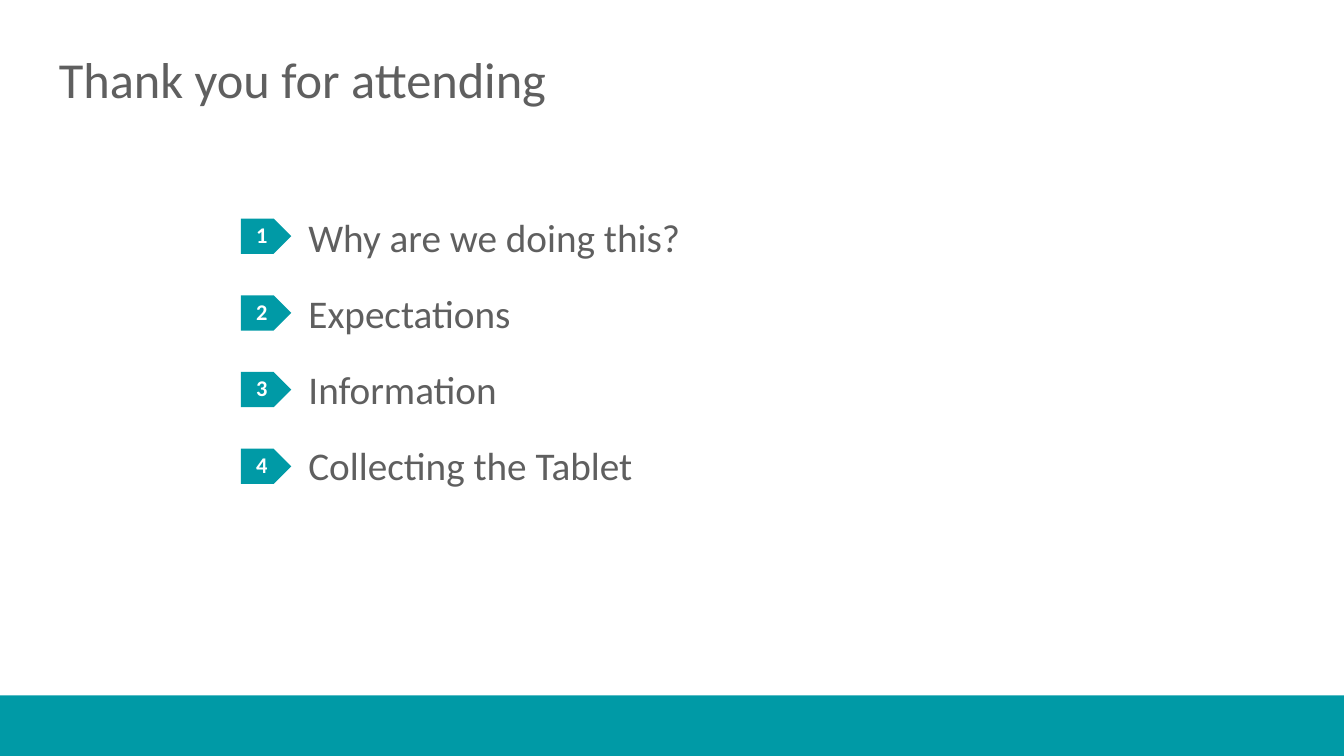
from lxml import etree
from pptx import Presentation
from pptx.dml.color import RGBColor
from pptx.enum.shapes import MSO_SHAPE
from pptx.enum.text import MSO_ANCHOR, MSO_AUTO_SIZE, PP_ALIGN
from pptx.oxml.ns import qn
from pptx.util import Pt

RECTANGLE, PENTAGON = MSO_SHAPE.RECTANGLE, MSO_SHAPE.PENTAGON
TOP, MIDDLE, BOTTOM = MSO_ANCHOR.TOP, MSO_ANCHOR.MIDDLE, MSO_ANCHOR.BOTTOM
LEFT, CENTER = PP_ALIGN.LEFT, PP_ALIGN.CENTER
NO_AUTOFIT = MSO_AUTO_SIZE.NONE

TEAL = RGBColor(0x00, 0x9A, 0xA6)
GREY = RGBColor(0x5F, 0x5F, 0x5F)
WHITE = RGBColor(0xFF, 0xFF, 0xFF)

SLIDE_WIDTH, SLIDE_HEIGHT = 960, 540
BAND_TOP = 496.8
AGENDA_TOP, AGENDA_PITCH = 156.1, 54.8
AGENDA = ["Why are we doing this?", "Expectations", "Information",
          "Collecting the Tablet"]


def set_all(target, values):
    for name, value in values.items():
        setattr(target, name, value)


def place(placeholder, left, top, width, height):
    set_all(placeholder, {"left": Pt(left), "top": Pt(top),
                          "width": Pt(width), "height": Pt(height)})


def write_lines(shape, lines, size, color, anchor, align=LEFT,
                bold=False, line_spacing=0.9, gap=0):
    frame = shape.text_frame
    set_all(frame, {"word_wrap": True, "auto_size": NO_AUTOFIT,
                    "vertical_anchor": anchor,
                    "margin_left": 0, "margin_right": 0,
                    "margin_top": 0, "margin_bottom": 0})
    frame.text = "\n".join(lines)
    for index, paragraph in enumerate(frame.paragraphs):
        properties = paragraph._p.get_or_add_pPr()
        properties.set("marL", "0")
        properties.set("indent", "0")
        etree.SubElement(properties, qn("a:buNone"))
        set_all(paragraph, {"alignment": align, "line_spacing": line_spacing,
                            "space_before": Pt(gap if index else 0)})
        set_all(paragraph.font, {"name": "Calibri", "size": Pt(size),
                                 "bold": bold})
        paragraph.font.color.rgb = color


def add_teal_shape(slide, kind, left, top, width, height):
    shape = slide.shapes.add_shape(kind, Pt(left), Pt(top), Pt(width), Pt(height))
    shape.shadow.inherit = False
    shape.fill.solid()
    shape.fill.fore_color.rgb = TEAL
    shape.line.fill.background()
    return shape


def main():
    presentation = Presentation()
    set_all(presentation, {"slide_width": Pt(SLIDE_WIDTH),
                           "slide_height": Pt(SLIDE_HEIGHT)})
    slide = presentation.slides.add_slide(presentation.slide_layouts[1])

    # Footer band
    add_teal_shape(slide, RECTANGLE, 0, BAND_TOP, SLIDE_WIDTH,
                   SLIDE_HEIGHT - BAND_TOP)

    # Title
    title = slide.shapes.title
    place(title, 42, 31.7, 876, 45.4)
    write_lines(title, ["Thank you for attending"], 36, GREY, BOTTOM,
                line_spacing=0.8)

    # Numbered markers
    for index in range(len(AGENDA)):
        marker = add_teal_shape(slide, PENTAGON, 172.1,
                                AGENDA_TOP + index * AGENDA_PITCH, 36, 25.2)
        write_lines(marker, [str(index + 1)], 16, WHITE, MIDDLE, CENTER, bold=True)

    # Agenda
    agenda = slide.placeholders[1]
    place(agenda, 220.3, AGENDA_TOP, 697.7, 311.8)
    write_lines(agenda, AGENDA, 28, GREY, TOP, gap=24)

    presentation.save("out.pptx")


if __name__ == "__main__":
    main()
